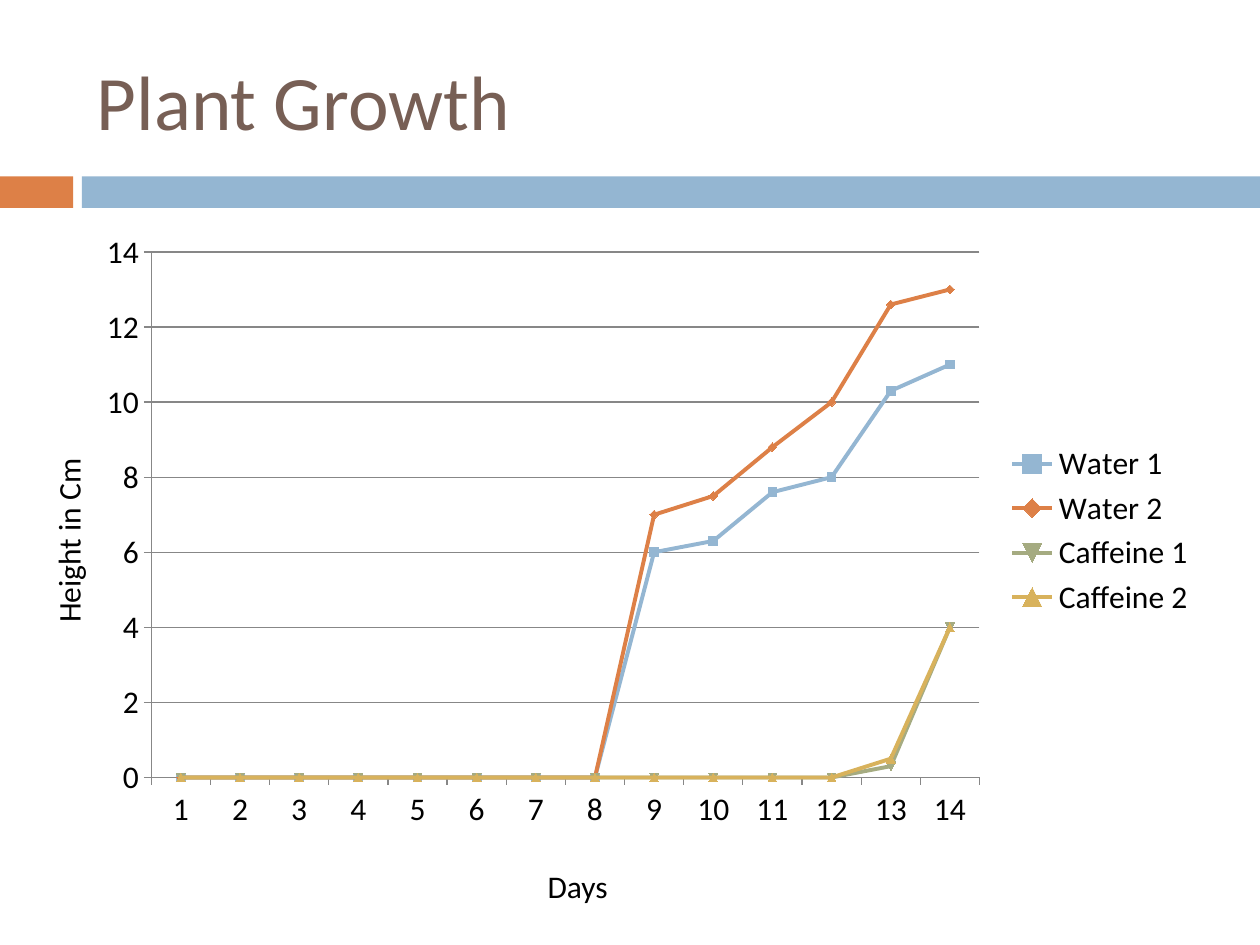
from dataclasses import dataclass

from pptx import Presentation
from pptx.chart.data import CategoryChartData
from pptx.dml.color import RGBColor
from pptx.enum.chart import XL_CHART_TYPE as ChartType
from pptx.enum.chart import XL_LEGEND_POSITION as LegendPosition
from pptx.enum.chart import XL_TICK_MARK as TickMark
from pptx.enum.shapes import MSO_SHAPE as Shape
from pptx.enum.text import MSO_ANCHOR as Anchor
from pptx.enum.text import PP_ALIGN as Align
from pptx.slide import Slide
from pptx.util import Emu, Pt

EMU_PER_PX = 9144
FONT = "Calibri"
BLACK = "000000"
GRAY = "878787"


@dataclass(frozen=True)
class Box:
    left: int
    top: int
    width: int
    height: int

    def emu(self) -> tuple[Emu, ...]:
        return tuple(px(n) for n in (self.left, self.top, self.width, self.height))


@dataclass(frozen=True)
class Bar:
    box: Box
    color: str


@dataclass(frozen=True)
class Label:
    text: str
    box: Box
    size: int = 18
    color: str = BLACK
    align: Align = Align.LEFT
    anchor: Anchor = Anchor.TOP
    rotation: int = 0


@dataclass(frozen=True)
class Growth:
    name: str
    color: str
    first_day: int
    heights: tuple[float, ...]


DAYS = range(1, 15)
BARS = (
    Bar(Box(0, 140, 58, 25), "DD8047"),
    Bar(Box(65, 140, 935, 25), "94B6D2"),
)
LABELS = (
    Label("Plant Growth", Box(67, 25, 892, 108), 44, "775F55", anchor=Anchor.MIDDLE),
    Label("Height in Cm", Box(-44, 386, 196, 40), rotation=270),
    Label("Days", Box(200, 683, 517, 40), align=Align.CENTER),
)
CHART_BOX = Box(67, 175, 892, 492)
PLANTS = (
    Growth("Water 1", "94B6D2", 9, (6, 6.3, 7.6, 8, 10.3, 11)),
    Growth("Water 2", "DD8047", 9, (7, 7.5, 8.8, 10, 12.6, 13)),
    Growth("Caffeine 1", "A5AB81", 13, (0.3, 4)),
    Growth("Caffeine 2", "D8B25C", 13, (0.5, 4)),
)


def px(length: int) -> Emu:
    return Emu(length * EMU_PER_PX)


def rgb(color: str) -> RGBColor:
    return RGBColor.from_string(color)


def style_font(font, size: int, color: str) -> None:
    font.name = FONT
    font.size = Pt(size)
    font.color.rgb = rgb(color)


def draw_bar(slide: Slide, bar: Bar) -> None:
    shape = slide.shapes.add_shape(Shape.RECTANGLE, *bar.box.emu())
    shape.shadow.inherit = False
    shape.fill.solid()
    shape.fill.fore_color.rgb = rgb(bar.color)
    shape.line.fill.background()


def draw_label(slide: Slide, label: Label) -> None:
    shape = slide.shapes.add_textbox(*label.box.emu())
    shape.rotation = label.rotation
    frame = shape.text_frame
    frame.word_wrap = True
    frame.vertical_anchor = label.anchor
    paragraph = frame.paragraphs[0]
    paragraph.text = label.text
    paragraph.alignment = label.align
    style_font(paragraph.font, label.size, label.color)


def draw_chart(slide: Slide, box: Box, plants: tuple[Growth, ...]) -> None:
    data = CategoryChartData()
    data.categories = [str(day) for day in DAYS]
    for plant in plants:
        data.add_series(plant.name, (0,) * (plant.first_day - 1) + plant.heights)
    chart = slide.shapes.add_chart(ChartType.LINE_MARKERS, *box.emu(), data).chart
    chart.has_title = False
    style_font(chart.font, 18, BLACK)
    chart.has_legend = True
    chart.legend.position = LegendPosition.RIGHT
    chart.legend.include_in_layout = False
    chart.plots[0].vary_by_categories = False

    for axis in (chart.category_axis, chart.value_axis):
        axis.major_tick_mark = TickMark.OUTSIDE
        axis.minor_tick_mark = TickMark.NONE
        axis.format.line.color.rgb = rgb(GRAY)
        axis.format.line.width = Pt(0.75)
    value_axis = chart.value_axis
    value_axis.minimum_scale = 0
    value_axis.maximum_scale = 14
    value_axis.major_unit = 2
    value_axis.has_major_gridlines = True
    value_axis.major_gridlines.format.line.color.rgb = rgb(GRAY)
    value_axis.major_gridlines.format.line.width = Pt(0.75)

    for series, plant in zip(chart.plots[0].series, plants):
        series.smooth = False
        series.format.line.color.rgb = rgb(plant.color)
        series.format.line.width = Pt(2.25)
        marker = series.marker.format
        marker.fill.solid()
        marker.fill.fore_color.rgb = rgb(plant.color)
        marker.line.color.rgb = rgb(plant.color)


def main() -> None:
    presentation = Presentation()
    presentation.slide_width = px(1000)
    presentation.slide_height = px(750)
    slide = presentation.slides.add_slide(presentation.slide_layouts[6])
    for bar in BARS:
        draw_bar(slide, bar)
    draw_chart(slide, CHART_BOX, PLANTS)
    for label in LABELS:
        draw_label(slide, label)
    presentation.save("out.pptx")


if __name__ == "__main__":
    main()
